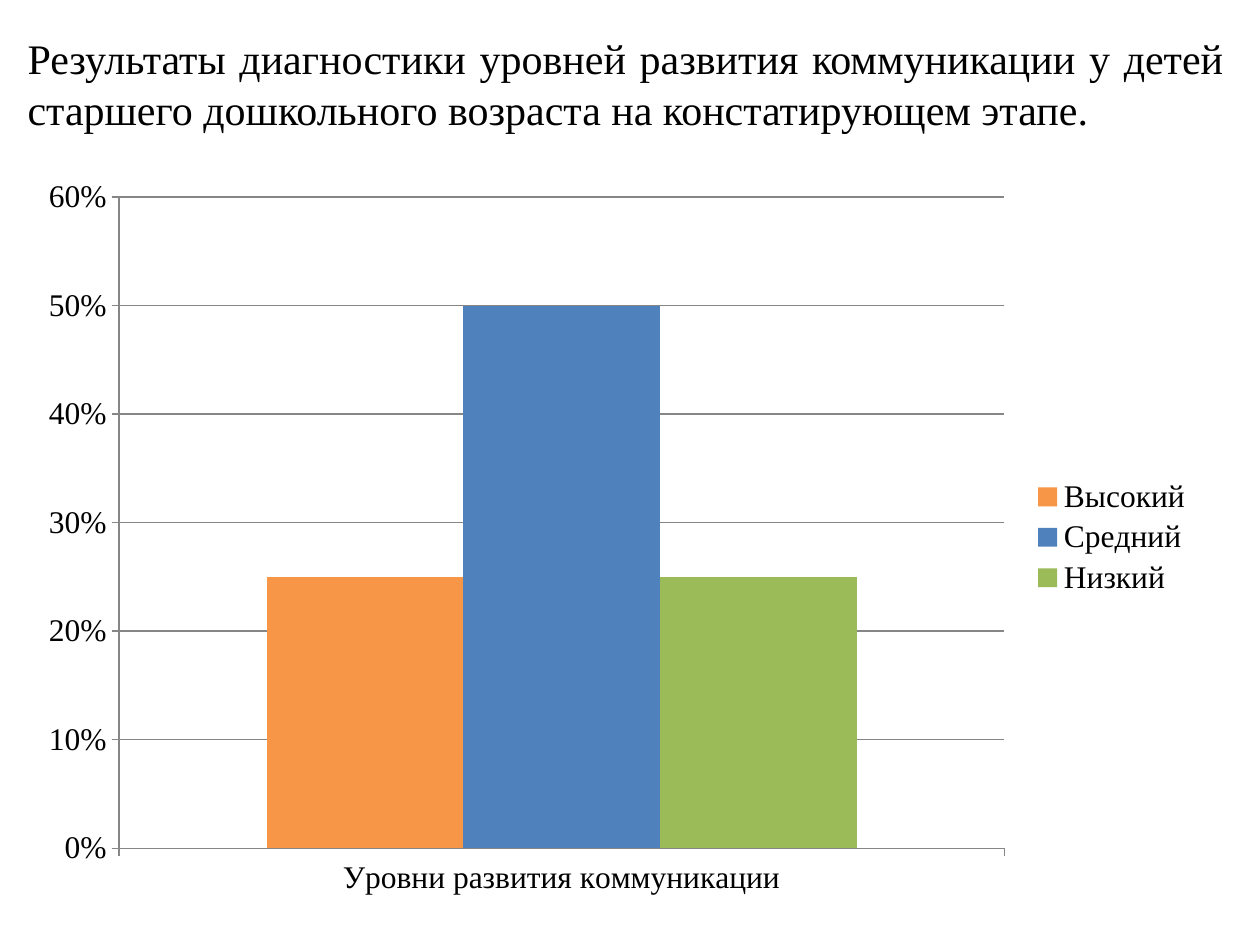
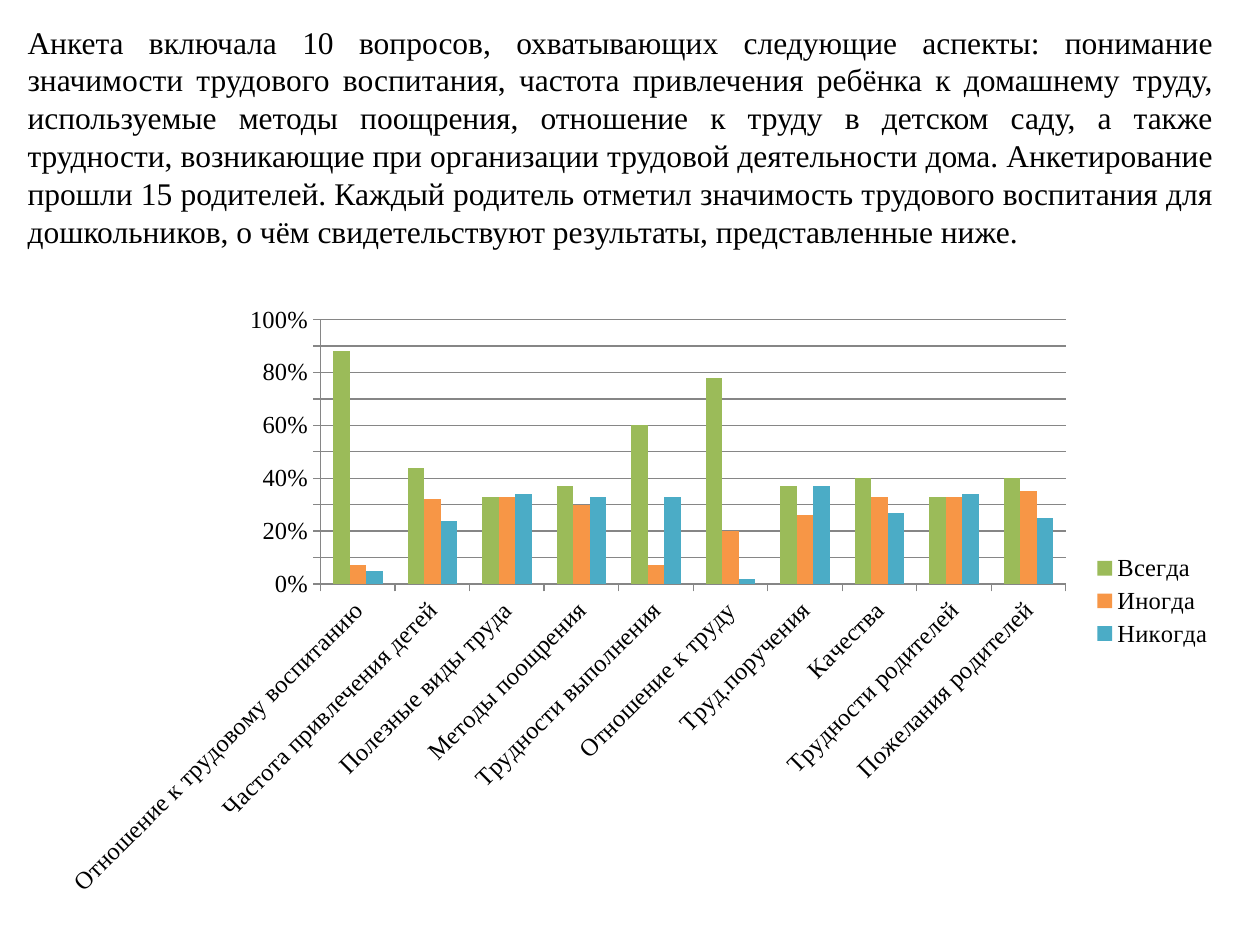
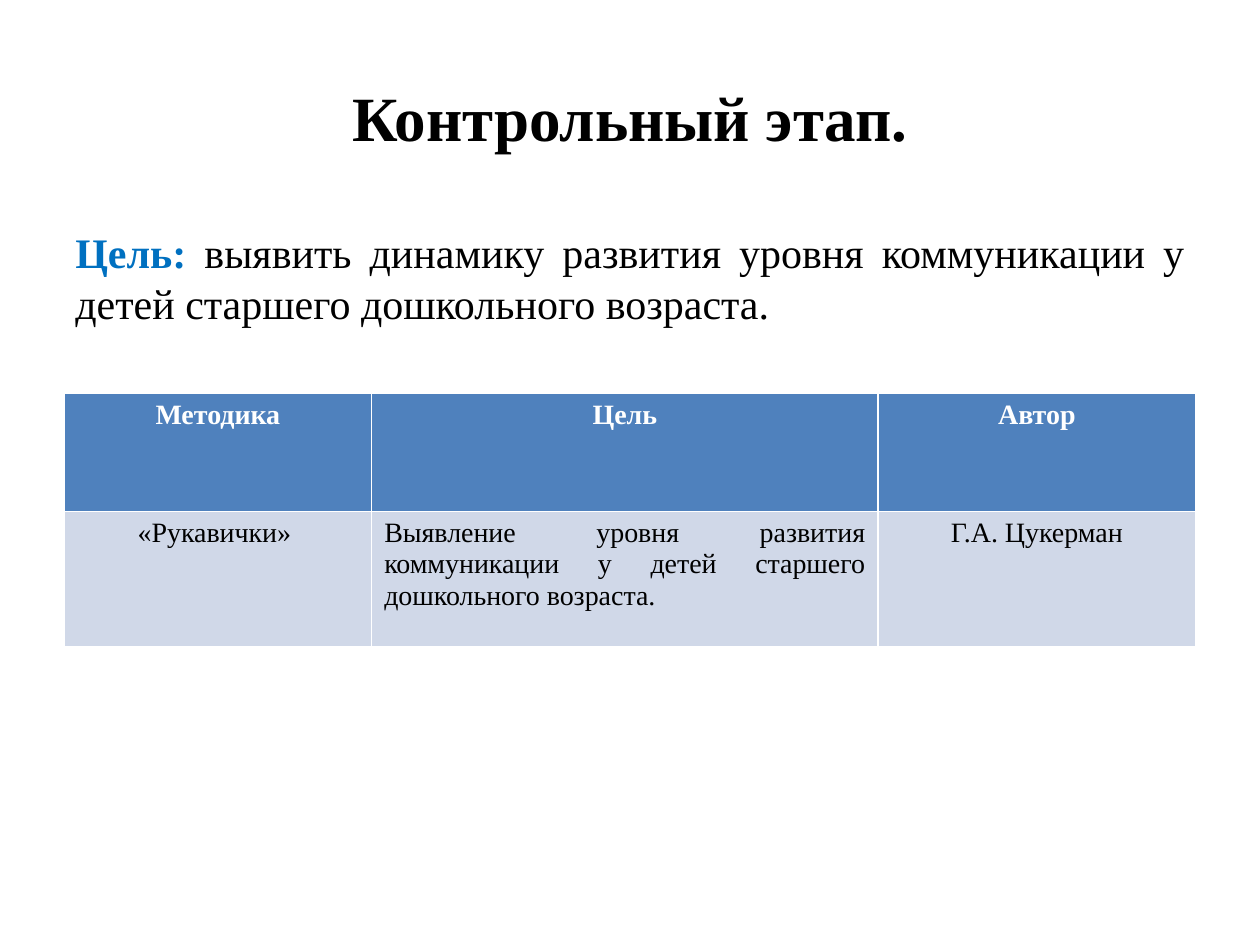
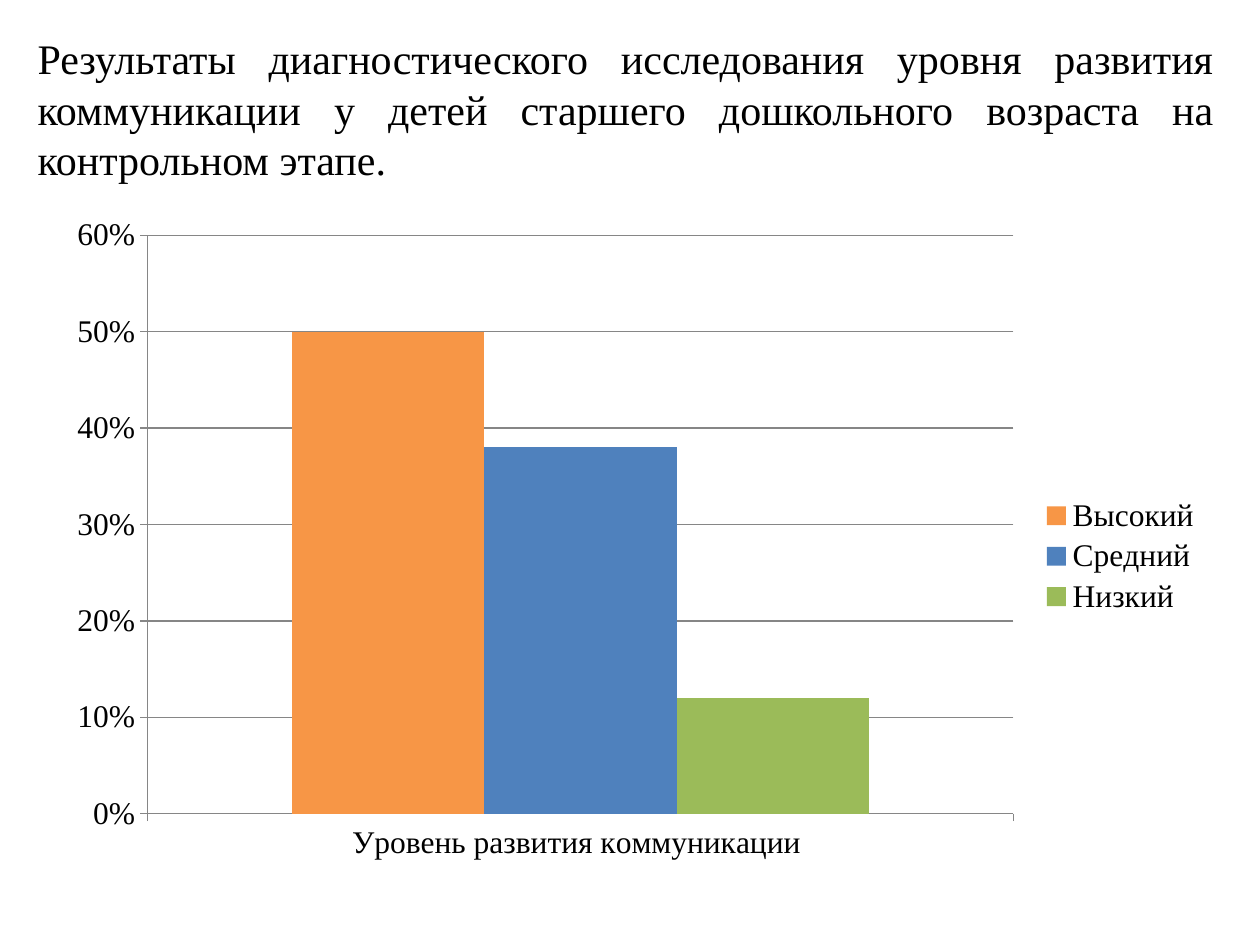
from dataclasses import dataclass

from pptx import Presentation
from pptx.chart import data as chart_data
from pptx.dml.color import RGBColor
from pptx.enum import chart as ce
from pptx.enum import text as te
from pptx.util import Inches, Pt

FONT = "Times New Roman"
BLACK = RGBColor(0, 0, 0)
WHITE = RGBColor(255, 255, 255)
BLUE = RGBColor(0x4F, 0x81, 0xBD)
ORANGE = RGBColor(0xF7, 0x96, 0x46)
GREEN = RGBColor(0x9B, 0xBB, 0x59)
TEAL = RGBColor(0x4B, 0xAC, 0xC6)
ACCENT = RGBColor(0x00, 0x70, 0xC0)
PALE_BLUE = RGBColor(0xD0, 0xD8, 0xE8)
GRID_GREY = RGBColor(0x86, 0x86, 0x86)
CENTER = te.PP_ALIGN.CENTER
JUSTIFY = te.PP_ALIGN.JUSTIFY
TITLE_ONLY, BLANK = 5, 6


@dataclass(frozen=True)
class Area:
    left: float
    top: float
    width: float
    height: float

    def lengths(self) -> tuple:
        return tuple(Inches(v) for v in (self.left, self.top, self.width, self.height))


@dataclass(frozen=True)
class Series:
    name: str
    color: RGBColor
    values: tuple


@dataclass(frozen=True)
class ColumnChart:
    area: Area
    categories: tuple
    series: tuple
    maximum: float = 0.6
    size: int = 18
    label_turn: int = 0


@dataclass(frozen=True)
class ChartSlide:
    statement: str
    text_area: Area
    text_size: int
    chart: ColumnChart
    grows: bool = True


def level_series(high: float, middle: float, low: float) -> tuple:
    return (
        Series("Высокий", ORANGE, (high,)),
        Series("Средний", BLUE, (middle,)),
        Series("Низкий", GREEN, (low,)),
    )


ASCERTAINING = ChartSlide(
    "Результаты диагностики уровней развития коммуникации у детей старшего "
    "дошкольного возраста на констатирующем этапе.",
    Area(0.12, 0.21, 9.69, 7.09),
    24,
    ColumnChart(
        Area(0.2, 1.31, 9.37, 5.91),
        ("Уровни развития коммуникации",),
        level_series(0.25, 0.5, 0.25),
    ),
    grows=False,
)

SURVEY = ChartSlide(
    "Анкета включала 10 вопросов, охватывающих следующие аспекты: понимание "
    "значимости трудового воспитания, частота привлечения ребёнка к домашнему "
    "труду, используемые методы поощрения, отношение к труду в детском саду, а "
    "также трудности, возникающие при организации трудовой деятельности дома. "
    "Анкетирование прошли 15 родителей. Каждый родитель отметил значимость "
    "трудового воспитания для дошкольников, о чём свидетельствуют результаты, "
    "представленные ниже.",
    Area(0.12, 0.13, 9.61, 1.92),
    18,
    ColumnChart(
        Area(0.35, 2.33, 9.38, 4.88),
        (
            "Отношение к трудовому воспитанию",
            "Частота привлечения детей",
            "Полезные виды труда",
            "Методы поощрения",
            "Трудности выполнения",
            "Отношение к труду",
            "Труд.поручения",
            "Качества",
            "Трудности родителей",
            "Пожелания родителей",
        ),
        (
            Series("Всегда", GREEN, (0.88, 0.44, 0.33, 0.37, 0.6, 0.78, 0.37, 0.4, 0.33, 0.4)),
            Series("Иногда", ORANGE, (0.07, 0.32, 0.33, 0.3, 0.07, 0.2, 0.26, 0.33, 0.33, 0.35)),
            Series("Никогда", TEAL, (0.05, 0.24, 0.34, 0.33, 0.33, 0.02, 0.37, 0.27, 0.34, 0.25)),
        ),
        maximum=1,
        size=14,
        label_turn=-45,
    ),
)

CONTROL = ChartSlide(
    "Результаты диагностического исследования уровня развития коммуникации у "
    "детей старшего дошкольного возраста на контрольном этапе.",
    Area(0.2, 0.21, 9.53, 1.31),
    24,
    ColumnChart(
        Area(0.43, 1.62, 9.21, 5.59),
        ("Уровень развития коммуникации \n",),
        level_series(0.5, 0.38, 0.12),
    ),
)

METHOD_ROWS = (
    ("Методика", "Цель", "Автор"),
    (
        "«Рукавички» ",
        "Выявление уровня развития коммуникации у детей старшего дошкольного возраста.",
        "Г.А. Цукерман",
    ),
)
METHOD_WIDTHS = (2.44, 4.02, 2.52)
METHOD_HEIGHTS = (0.94, 1.07)


def set_font(font, size: int, color: RGBColor = BLACK, bold: bool = False) -> None:
    font.name = FONT
    font.size = Pt(size)
    font.bold = bold
    font.color.rgb = color


def add_statement(slide, area: Area, content: str, size: int, grows: bool = False):
    box = slide.shapes.add_textbox(*area.lengths())
    frame = box.text_frame
    frame.word_wrap = True
    if grows:
        frame.auto_size = te.MSO_AUTO_SIZE.SHAPE_TO_FIT_TEXT
    para = frame.paragraphs[0]
    para.text = content
    para.alignment = JUSTIFY
    set_font(para.font, size)
    return para


def add_column_chart(slide, design: ColumnChart) -> None:
    data = chart_data.CategoryChartData(number_format="0%")
    data.categories = design.categories
    for series in design.series:
        data.add_series(series.name, series.values)
    frame = slide.shapes.add_chart(
        ce.XL_CHART_TYPE.COLUMN_CLUSTERED, *design.area.lengths(), data
    )
    chart = frame.chart
    set_font(chart.font, design.size)
    chart.has_title = False
    chart.has_legend = True
    chart.legend.position = ce.XL_LEGEND_POSITION.RIGHT
    chart.legend.include_in_layout = False
    set_font(chart.legend.font, design.size)

    plot = chart.plots[0]
    plot.gap_width = 150
    plot.vary_by_categories = False
    for bars, series in zip(plot.series, design.series):
        bars.format.fill.solid()
        bars.format.fill.fore_color.rgb = series.color

    values = chart.value_axis
    values.minimum_scale = 0
    values.maximum_scale = design.maximum
    values.major_unit = 0.1
    values.tick_labels.number_format = "0%"
    values.tick_labels.number_format_is_linked = False
    values.has_major_gridlines = True
    for axis in (chart.category_axis, values):
        axis.major_tick_mark = ce.XL_TICK_MARK.OUTSIDE
        set_font(axis.tick_labels.font, design.size)
    for ruled in (chart.category_axis, values, values.major_gridlines):
        ruled.format.line.color.rgb = GRID_GREY
        ruled.format.line.width = Pt(0.75)
    if design.label_turn:
        body = chart.element.xpath(".//c:catAx/c:txPr/a:bodyPr")[0]
        body.set("rot", str(design.label_turn * 60000))


def add_chart_slide(deck, design: ChartSlide) -> None:
    slide = deck.slides.add_slide(deck.slide_layouts[BLANK])
    add_column_chart(slide, design.chart)
    add_statement(slide, design.text_area, design.statement, design.text_size, design.grows)


def add_method_table(slide) -> None:
    area = Area(0.51, 3.12, sum(METHOD_WIDTHS), sum(METHOD_HEIGHTS))
    table = slide.shapes.add_table(
        len(METHOD_ROWS), len(METHOD_WIDTHS), *area.lengths()
    ).table
    table.horz_banding = False
    for column, width in zip(table.columns, METHOD_WIDTHS):
        column.width = Inches(width)
    for row, height in zip(table.rows, METHOD_HEIGHTS):
        row.height = Inches(height)
    for r, labels in enumerate(METHOD_ROWS):
        header = r == 0
        for c, label in enumerate(labels):
            cell = table.cell(r, c)
            cell.fill.solid()
            cell.fill.fore_color.rgb = BLUE if header else PALE_BLUE
            para = cell.text_frame.paragraphs[0]
            para.text = label
            para.alignment = JUSTIFY if c == 1 and not header else CENTER
            set_font(para.font, 16, WHITE if header else BLACK, header)


def add_control_stage(deck) -> None:
    slide = deck.slides.add_slide(deck.slide_layouts[TITLE_ONLY])
    title = slide.shapes.title
    title.left, title.top, title.width, title.height = Area(0.5, 0.3, 9, 1.25).lengths()
    title.text_frame.vertical_anchor = te.MSO_ANCHOR.MIDDLE
    para = title.text_frame.paragraphs[0]
    para.text = "Контрольный этап."
    para.alignment = CENTER
    set_font(para.font, 36, bold=True)

    goal = add_statement(slide, Area(0.5, 1.75, 9, 4.95), "Цель:", 24)
    set_font(goal.runs[0].font, 24, ACCENT, True)
    span = goal.add_run()
    span.text = " выявить динамику развития уровня коммуникации у детей старшего дошкольного возраста."
    set_font(span.font, 24)
    add_method_table(slide)


def main() -> None:
    deck = Presentation()
    deck.slide_width, deck.slide_height = Inches(10), Inches(7.5)
    add_chart_slide(deck, ASCERTAINING)
    add_chart_slide(deck, SURVEY)
    add_control_stage(deck)
    add_chart_slide(deck, CONTROL)
    deck.save("out.pptx")


if __name__ == "__main__":
    main()
